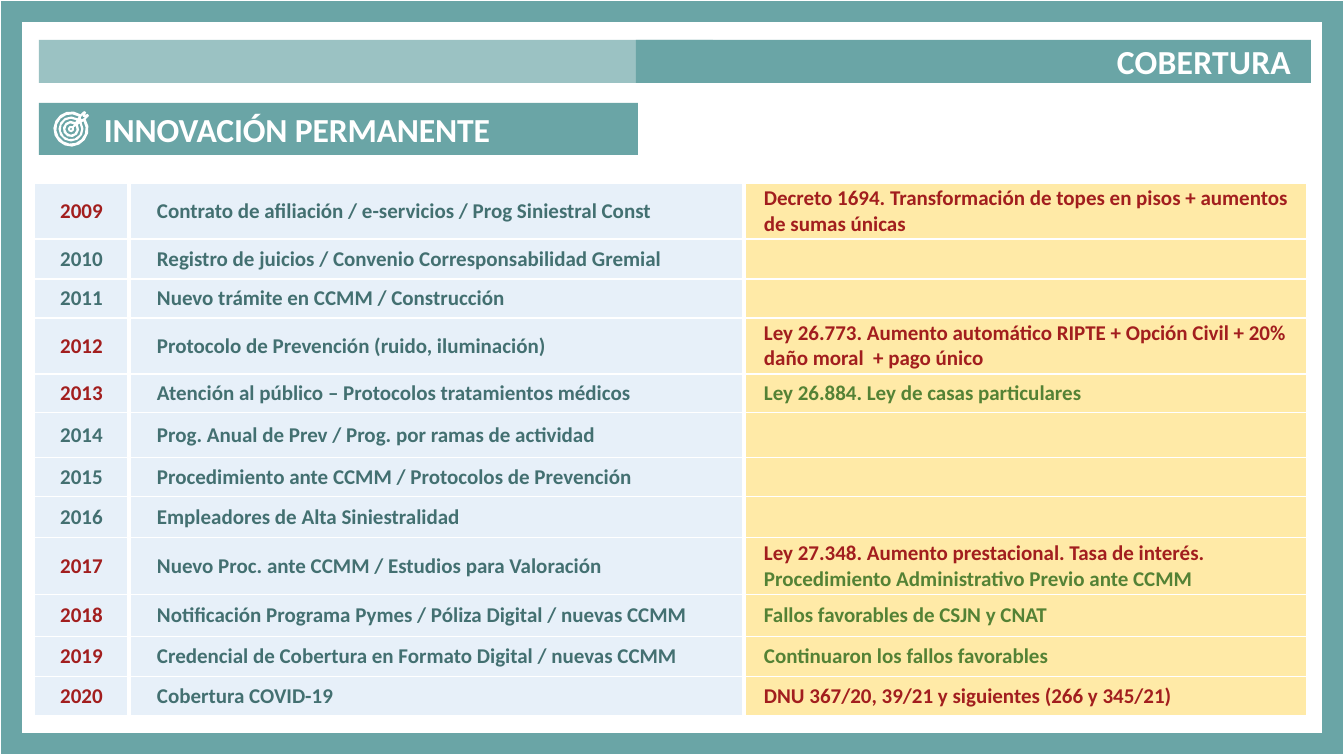
from math import cos, radians, sin

from lxml import etree
from pptx import Presentation
from pptx.dml.color import RGBColor
from pptx.enum.shapes import MSO_SHAPE
from pptx.enum.text import MSO_ANCHOR, PP_ALIGN
from pptx.oxml.ns import qn
from pptx.util import Pt

RECTANGLE = MSO_SHAPE.RECTANGLE
MIDDLE = MSO_ANCHOR.MIDDLE
LEFT, CENTER, RIGHT = PP_ALIGN.LEFT, PP_ALIGN.CENTER, PP_ALIGN.RIGHT

PX = 914400 / 100.8
FONT = "Calibri"
TEAL, DARK_TEAL, WHITE = "6AA5A6", "437071", "FFFFFF"
RED, GREEN, BLUE, YELLOW = "A21E1E", "548235", "5B9BD5", "FFEAA7"

SECTION = "COBERTURA"
TITLE = "INNOVACIÓN PERMANENTE"

# Year, row height, innovation, legal changes as (text, colour) runs
MILESTONES = [
    ("2009", 56, "Contrato de afiliación / e-servicios / Prog Siniestral Const",
     [("Decreto 1694. Transformación de topes en pisos + aumentos de sumas únicas", RED)]),
    ("2010", 40, "Registro de juicios / Convenio Corresponsabilidad Gremial", []),
    ("2011", 39, "Nuevo trámite en CCMM / Construcción", []),
    ("2012", 56, "Protocolo de Prevención (ruido, iluminación)",
     [("Ley 26.773. Aumento automático RIPTE + Opción Civil + 20% daño moral  + pago único", RED)]),
    ("2013", 39, "Atención al público – Protocolos tratamientos médicos",
     [("Ley 26.884. Ley de casas particulares", GREEN)]),
    ("2014", 45, "Prog. Anual de Prev / Prog. por ramas de actividad", []),
    ("2015", 39, "Procedimiento ante CCMM / Protocolos de Prevención", []),
    ("2016", 41, "Empleadores de Alta Siniestralidad", []),
    ("2017", 57, "Nuevo Proc. ante CCMM / Estudios para Valoración",
     [("Ley 27.348. Aumento prestacional. Tasa de interés. ", RED),
      ("Procedimiento Administrativo Previo ante CCMM", GREEN)]),
    ("2018", 42, "Notificación Programa Pymes / Póliza Digital / nuevas CCMM",
     [("Fallos favorables de CSJN y CNAT", GREEN)]),
    ("2019", 40, "Credencial de Cobertura en Formato Digital / nuevas CCMM",
     [("Continuaron los fallos favorables", GREEN)]),
    ("2020", 39, "Cobertura COVID-19",
     [("DNU 367/20, 39/21 y siguientes (266 y 345/21)", RED)]),
]
TABLE_LEFT, TABLE_TOP = 34, 183
# Width, left margin, alignment, fill, opacity, left and right border in points
COLUMNS = [
    (95, 0, CENTER, BLUE, 14, 1, 3),
    (615, 28, LEFT, BLUE, 14, 3, 3),
    (563, 20, LEFT, YELLOW, 100, 3, 1),
]

# Target icon, in tenths of a px from its centre
TARGET_CENTER = (71, 129)
TARGET_RADIUS, BULLSEYE_RADIUS = 176, 11
GROOVES = [(147, 125), (103, 81), (57, 33)]
ARROW = [(100, -150), (130, -180), (152, -168), (140, -140),
         (168, -152), (180, -130), (150, -100)]
ARROW_HOLE = [(120, -140), (120, -120), (140, -120),
              (120, -100), (100, -100), (100, -120)]


def px(length):
    return round(length * PX)


def rgb(color):
    return RGBColor.from_string(color)


def set_fill(item, color, opacity=100):
    item.fill.solid()
    item.fill.fore_color.rgb = rgb(color)
    if opacity < 100:
        # A table cell exposes its properties as tcPr, a shape as spPr
        element = item._tc.tcPr if hasattr(item, "_tc") else item._element.spPr
        color_element = element.find(qn("a:solidFill"))[0]
        etree.SubElement(color_element, qn("a:alpha"), val=str(opacity * 1000))


def add_runs(paragraph, runs, size, spacing=0):
    """Add bold (text, colour) runs; spacing is in hundredths of a point."""
    for text, color in runs:
        run = paragraph.add_run()
        run.text = text
        run.font.name = FONT
        run.font.size = Pt(size)
        run.font.bold = True
        run.font.color.rgb = rgb(color)
        if spacing:
            run.font._element.set("spc", str(spacing))


def add_rectangle(slide, left, top, width, height):
    shape = slide.shapes.add_shape(RECTANGLE, px(left), px(top), px(width), px(height))
    shape.shadow.inherit = False
    return shape


def add_bar(slide, left, top, width, height, opacity=100, text="",
            align=LEFT, margins=(0, 0), spacing=0):
    bar = add_rectangle(slide, left, top, width, height)
    set_fill(bar, TEAL, opacity)
    bar.line.fill.background()
    if text:
        frame = bar.text_frame
        frame.word_wrap = True
        frame.vertical_anchor = MIDDLE
        frame.margin_left, frame.margin_right = map(px, margins)
        frame.margin_top = frame.margin_bottom = 0
        frame.paragraphs[0].alignment = align
        add_runs(frame.paragraphs[0], [(text, WHITE)], 24, spacing)


def arc(radius, half_gap):
    """Points around a circle, open by half_gap degrees each side of its upper right."""
    sweep, steps = 360 - 2 * half_gap, 5 + radius // 18
    angles = [radians(half_gap - 45 + sweep * step / steps) for step in range(steps + 1)]
    return [(radius * cos(angle), radius * sin(angle)) for angle in angles]


def add_target(slide):
    contours = [arc(TARGET_RADIUS, 11) + ARROW, ARROW_HOLE, arc(BULLSEYE_RADIUS, 0)]
    contours += [arc(outer, 13) + arc(inner, 13)[::-1] for outer, inner in GROOVES]
    builder = slide.shapes.build_freeform(*contours[0][0], scale=PX / 10)
    for index, contour in enumerate(contours):
        if index:
            builder.move_to(*contour[0])
        builder.add_line_segments(contour[1:], close=True)
    target = builder.convert_to_shape(*map(px, TARGET_CENTER))
    target.shadow.inherit = False
    set_fill(target, WHITE)
    target.line.fill.background()


def set_borders(cell, left, right):
    properties = cell._tc.get_or_add_tcPr()
    for side, width in (("L", left), ("R", right), ("T", 1), ("B", 1)):
        line = etree.SubElement(properties, qn(f"a:ln{side}"), w=str(Pt(width)))
        fill = etree.SubElement(line, qn("a:solidFill"))
        etree.SubElement(fill, qn("a:srgbClr"), val=WHITE)


def add_milestones(slide):
    width = sum(column[0] for column in COLUMNS)
    height = sum(milestone[1] for milestone in MILESTONES)
    table = slide.shapes.add_table(len(MILESTONES), len(COLUMNS), px(TABLE_LEFT),
                                   px(TABLE_TOP), px(width), px(height)).table
    table.first_row = table.horz_banding = False
    for index, column in enumerate(COLUMNS):
        table.columns[index].width = px(column[0])
    for row, (year, row_height, innovation, changes) in enumerate(MILESTONES):
        table.rows[row].height = px(row_height)
        year_color = RED if changes else DARK_TEAL
        contents = [[(year, year_color)], [(innovation, DARK_TEAL)], changes]
        for index, runs in enumerate(contents):
            _, margin, align, color, opacity, left, right = COLUMNS[index]
            cell = table.cell(row, index)
            set_borders(cell, left, right)
            set_fill(cell, color, opacity)
            cell.vertical_anchor = MIDDLE
            cell.margin_left = px(margin)
            cell.margin_right = cell.margin_top = cell.margin_bottom = 0
            paragraph = cell.text_frame.paragraphs[0]
            paragraph.alignment = align
            add_runs(paragraph, runs, 15)


def main():
    presentation = Presentation()
    presentation.slide_width, presentation.slide_height = px(1344), px(756)
    slide = presentation.slides.add_slide(presentation.slide_layouts[6])

    frame = add_rectangle(slide, 12, 12, 1321, 732)
    frame.fill.background()
    frame.line.color.rgb = rgb(TEAL)
    frame.line.width = Pt(15)
    etree.SubElement(frame.line._get_or_add_ln(), qn("a:miter"), lim="800000")

    add_bar(slide, 39, 40, 674, 43, opacity=67)
    add_bar(slide, 636, 40, 675, 43, text=SECTION, align=RIGHT, margins=(0, 20), spacing=20)
    add_bar(slide, 39, 103, 599, 52, text=TITLE, margins=(65, 0), spacing=-10)
    add_target(slide)
    add_milestones(slide)
    presentation.save("out.pptx")


if __name__ == "__main__":
    main()
